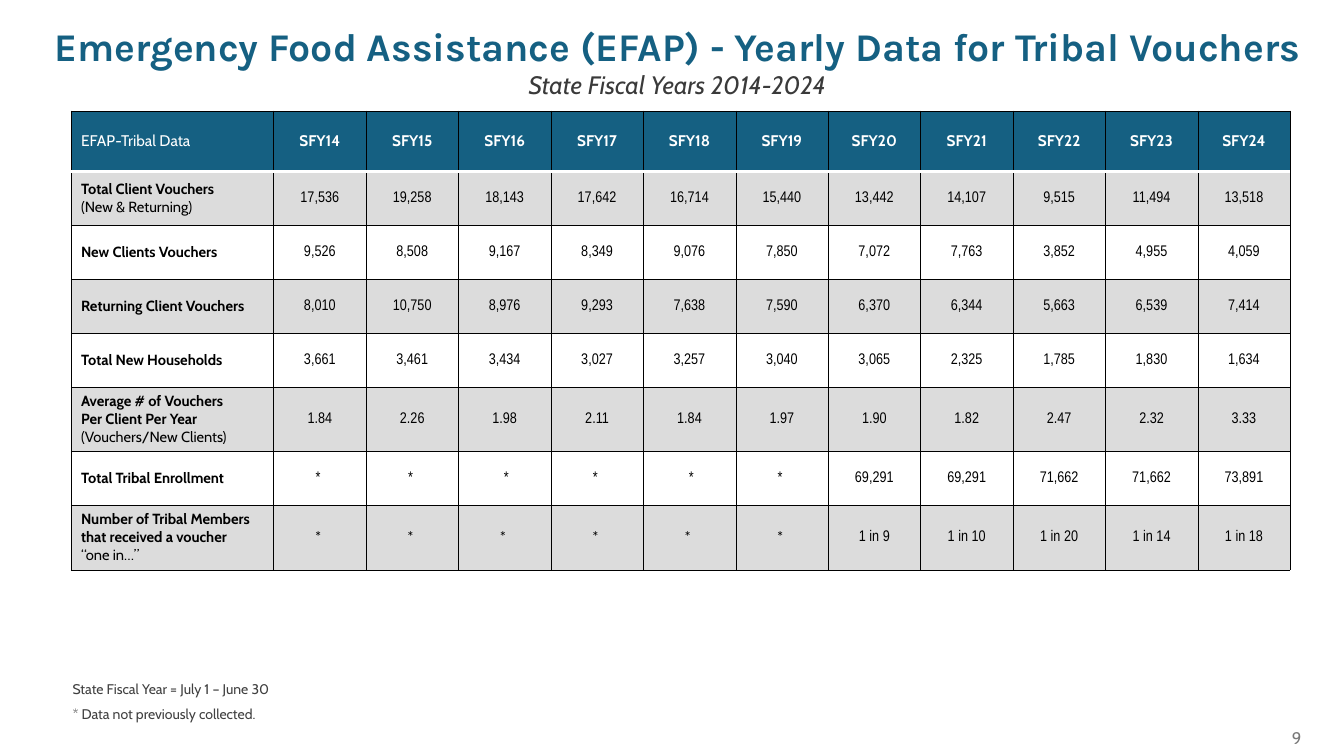
from lxml import etree
from pptx import Presentation
from pptx.dml.color import RGBColor
from pptx.enum.text import MSO_ANCHOR, MSO_AUTO_SIZE, PP_ALIGN
from pptx.oxml.ns import qn
from pptx.util import Emu, Pt

LEFT, CENTER, RIGHT = PP_ALIGN.LEFT, PP_ALIGN.CENTER, PP_ALIGN.RIGHT
TOP, MIDDLE = MSO_ANCHOR.TOP, MSO_ANCHOR.MIDDLE
GROW = MSO_AUTO_SIZE.SHAPE_TO_FIT_TEXT

EMU_PER_PX = 914400 // 200  # 200 px to the inch
SLIDE_SIZE = (2667, 1500)
BLUE, GRAY, WHITE, BLACK = "156082", "DCDCDC", "FFFFFF", "000000"
BODY, NUMBERS = "Cabin", "Arial Narrow"

# Table content: label paragraphs as (text, bold) runs, then one value per year
NBSP = chr(160)
STAR, STAR_AFTER = "*" + NBSP, NBSP + "*"
YEARS = range(14, 25)
ROWS = [
    ([[("Total Client Vouchers\n", True), ("(New & Returning)", False)]],
     ["17,536", "19,258", "18,143", "17,642", "16,714", "15,440",
      "13,442", "14,107", "9,515", "11,494", "13,518"]),
    ([[("New Clients Vouchers", True)]],
     ["9,526", "8,508", "9,167", "8,349", "9,076", "7,850",
      "7,072", "7,763", "3,852", "4,955", "4,059"]),
    ([[("Returning Client Vouchers", True)]],
     ["8,010", "10,750", "8,976", "9,293", "7,638", "7,590",
      "6,370", "6,344", "5,663", "6,539", "7,414"]),
    ([[("Total New Households", True)]],
     ["3,661", "3,461", "3,434", "3,027", "3,257", "3,040",
      "3,065", "2,325", "1,785", "1,830", "1,634"]),
    ([[("Average # of Vouchers\nPer Client Per Year", True)],
      [("(Vouchers/New Clients)", False)]],
     ["1.84", "2.26", "1.98", "2.11", "1.84", "1.97",
      "1.90", "1.82", "2.47", "2.32", "3.33"]),
    ([[("Total Tribal Enrollment", True)]],
     [STAR, STAR, STAR_AFTER, STAR, STAR_AFTER, STAR,
      "69,291", "69,291", "71,662", "71,662", "73,891"]),
    ([[("Number of Tribal Members that received a voucher\n", True),
       ("“one in…”", False)]],
     [STAR] * 6 + ["1 in 9", "1 in 10", "1 in 20", "1 in 14", "1 in 18"]),
]
HEADER_HEIGHT, ROW_HEIGHT, TALL_ROW_HEIGHT = 120, 107, 128
LABEL_WIDTH = 402


def px(length):
    return Emu(round(length * EMU_PER_PX))


def color(value):
    return RGBColor.from_string(value)


def write(paragraph, text, size=11, font=BODY, ink=BLACK, bold=False,
          italic=False, align=LEFT):
    """Append text to a paragraph; each newline becomes a line break."""
    paragraph.alignment = align
    for index, line in enumerate(text.split("\n")):
        if index:
            paragraph.add_line_break()
        if line:
            run = paragraph.add_run()
            run.text = line
            run.font.size = Pt(size)
            run.font.name = font
            run.font.bold = bold
            run.font.italic = italic
            run.font.color.rgb = color(ink)


def add_text_frame(slide, box, inset=(20, 10), anchor=TOP):
    frame = slide.shapes.add_textbox(*map(px, box)).text_frame
    frame.word_wrap = True
    frame.vertical_anchor = anchor
    frame.margin_left = frame.margin_right = px(inset[0])
    frame.margin_top = frame.margin_bottom = px(inset[1])
    return frame


def add_title(slide, box):
    frame = add_text_frame(slide, box)
    frame.auto_size = GROW
    write(frame.paragraphs[0],
          "Emergency Food Assistance (EFAP) - Yearly Data for Tribal Vouchers",
          size=28, font="Karla", ink=BLUE, bold=True, align=CENTER)
    write(frame.add_paragraph(), "State Fiscal Years 2014-2024",
          size=18, ink="3A3A3A", italic=True, align=CENTER)


def add_footnotes(slide, box):
    paragraph = add_text_frame(slide, box, inset=(26, 14)).paragraphs[0]
    paragraph.line_spacing = 1.5
    paragraph.space_before = paragraph.space_after = Pt(6)
    write(paragraph, "State Fiscal Year = July 1 – June 30\n"
          "* Data not previously collected.", size=10, ink="404040")


def add_page_number(slide, box):
    frame = add_text_frame(slide, box, anchor=MIDDLE)
    write(frame.paragraphs[0], "9", size=12, ink="797979", align=RIGHT)


def set_borders(cell, **special):
    """Thin black edges, except those given as side=(color, points)."""
    properties = cell._tc.get_or_add_tcPr()
    for side in "LRTB":
        ink, points = special.get(side, (BLACK, 0.25))
        line = etree.SubElement(properties, qn(f"a:ln{side}"),
                                w=str(Pt(points)))
        fill = etree.SubElement(line, qn("a:solidFill"))
        etree.SubElement(fill, qn("a:srgbClr"), val=ink)


def style_cell(cell, fill, is_label, **borders):
    cell.vertical_anchor = MIDDLE
    if not is_label:
        cell.margin_left = cell.margin_right = 0
        cell.margin_top = cell.margin_bottom = 0
    set_borders(cell, **borders)
    if fill:
        cell.fill.solid()
        cell.fill.fore_color.rgb = color(fill)
    else:
        cell.fill.background()


def add_voucher_table(slide, box):
    table = slide.shapes.add_table(len(ROWS) + 1, len(YEARS) + 1,
                                   *map(px, box)).table
    table.horz_banding = False
    year_width = (box[2] - LABEL_WIDTH) / len(YEARS)
    for index, column in enumerate(table.columns):
        column.width = px(year_width if index else LABEL_WIDTH)

    # Header row
    table.rows[0].height = px(HEADER_HEIGHT)
    headings = ["EFAP-Tribal Data"] + [f"SFY{year}" for year in YEARS]
    for index, heading in enumerate(headings):
        cell = table.cell(0, index)
        style_cell(cell, BLUE, index == 0, B=(WHITE, 3))
        write(cell.text_frame.paragraphs[0], heading, ink=WHITE,
              bold=index > 0, align=CENTER if index else LEFT)

    # Data rows, every other one shaded
    for row, (label, values) in enumerate(ROWS, start=1):
        is_tall = row in (5, 7)
        table.rows[row].height = px(TALL_ROW_HEIGHT if is_tall else ROW_HEIGHT)
        borders = {"T": (WHITE, 1)} if row == 1 else {}
        for column in range(len(values) + 1):
            style_cell(table.cell(row, column), GRAY if row % 2 else None,
                       column == 0, **borders)
        frame = table.cell(row, 0).text_frame
        for index, runs in enumerate(label):
            paragraph = frame.add_paragraph() if index else frame.paragraphs[0]
            for text, bold in runs:
                write(paragraph, text, size=10.5, bold=bold)
        for column, value in enumerate(values, start=1):
            is_last_star = row == len(ROWS) and value == STAR
            write(table.cell(row, column).text_frame.paragraphs[0], value,
                  font="Calibri" if is_last_star else NUMBERS, align=CENTER)


def main():
    presentation = Presentation()
    presentation.slide_width, presentation.slide_height = map(px, SLIDE_SIZE)
    slide = presentation.slides.add_slide(presentation.slide_layouts[6])
    add_title(slide, (74, 34, 2540, 176))
    add_footnotes(slide, (118, 1320, 2450, 146))
    add_page_number(slide, (2520, 1440, 82, 46))
    add_voucher_table(slide, (141, 220, 2420, 911))
    presentation.save("out.pptx")


if __name__ == "__main__":
    main()
